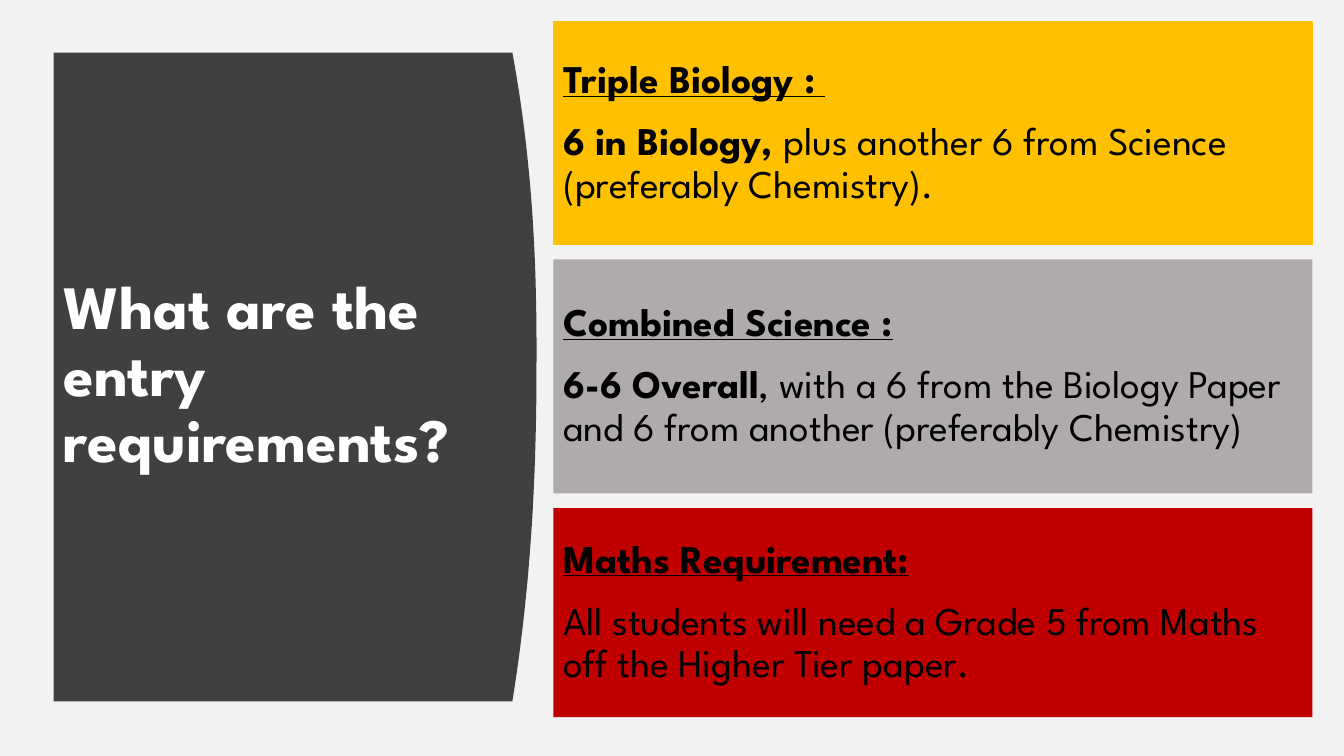
from dataclasses import dataclass

from pptx import Presentation
from pptx import util as u
from pptx.dml.color import RGBColor
from pptx.enum import shapes, text

PX = 9525


@dataclass(frozen=True)
class Theme:
    font: str = "League Spartan"
    background: str = "F2F2F2"
    banner: str = "404040"
    light_text: str = "FFFFFF"
    dark_text: str = "000000"
    biology: str = "FFC000"
    combined: str = "AFABAB"
    maths: str = "C00000"
    title_size: int = 44
    body_size: int = 28


@dataclass(frozen=True)
class Panel:
    heading: str
    emphasis: str
    detail: str
    color: str
    height: int
    outlined: bool = False


THEME = Theme()
PANEL_LEFT, PANEL_TOP, PANEL_WIDTH, PANEL_GAP = 527, 21, 723, 14
PANELS = [
    Panel("Triple Biology : ", "6 in Biology, ",
          "plus another 6 from Science (preferably Chemistry).",
          THEME.biology, 212, outlined=True),
    Panel("Combined Science :", "6-6 Overall",
          ", with a 6 from the Biology Paper and 6 from another (preferably Chemistry)",
          THEME.combined, 223),
    Panel("Maths Requirement:", "",
          "All students will need a Grade 5 from Maths off the Higher Tier paper.",
          THEME.maths, 199),
]


def rgb(color: str) -> RGBColor:
    return RGBColor.from_string(color)


def px(*lengths: float) -> list[int]:
    return [round(length * PX) for length in lengths]


def paint(shape, color: str, outlined: bool = False) -> None:
    shape.shadow.inherit = False
    shape.fill.solid()
    shape.fill.fore_color.rgb = rgb(color)
    if outlined:
        shape.line.color.rgb = rgb(color)
        shape.line.width = u.Pt(1)
    else:
        shape.line.fill.background()


def add_text(paragraph, words: str, *, size: int, color: str,
             bold: bool = False, underline: bool = False) -> None:
    run = paragraph.add_run()
    run.text = words
    run.font.name = THEME.font
    run.font.size = u.Pt(size)
    run.font.color.rgb = rgb(color)
    run.font.bold = bold
    run.font.underline = underline


def format_paragraph(paragraph, before: int = 0, after: int = 0) -> None:
    paragraph.alignment = text.PP_ALIGN.LEFT
    paragraph.line_spacing = 0.9
    paragraph.space_before = u.Pt(before)
    paragraph.space_after = u.Pt(after)


def prepare_frame(shape):
    frame = shape.text_frame
    frame.word_wrap = True
    frame.vertical_anchor = text.MSO_ANCHOR.MIDDLE
    return frame


def add_banner(slide) -> None:
    left, right, top, bottom = 51, 488, 50, 668
    middle, bulge, steps = 338, 23, 48
    curve = []
    for step in range(steps + 1):
        y = top + (bottom - top) * step / steps
        reach = middle - top if y < middle else bottom - middle
        x = right + bulge * (1 - (abs(y - middle) / reach) ** 2.3)
        curve.append(tuple(px(x, y)))
    builder = slide.shapes.build_freeform(*px(left, top))
    builder.add_line_segments([*curve, tuple(px(left, bottom))], close=True)
    paint(builder.convert_to_shape(), THEME.banner)


def add_title(slide) -> None:
    frame = prepare_frame(slide.shapes.add_textbox(*px(51, 107, 443, 503)))
    paragraph = frame.paragraphs[0]
    format_paragraph(paragraph)
    add_text(paragraph, "What are the entry requirements?",
             size=THEME.title_size, color=THEME.light_text, bold=True)


def add_panel(slide, panel: Panel, top: int) -> None:
    shape = slide.shapes.add_shape(
        shapes.MSO_SHAPE.RECTANGLE, *px(PANEL_LEFT, top, PANEL_WIDTH, panel.height))
    paint(shape, panel.color, panel.outlined)
    frame = prepare_frame(shape)
    heading, body = frame.paragraphs[0], frame.add_paragraph()
    for paragraph in (heading, body):
        format_paragraph(paragraph, before=12, after=2)
    style = dict(size=THEME.body_size, color=THEME.dark_text)
    add_text(heading, panel.heading, bold=True, underline=True, **style)
    if panel.emphasis:
        add_text(body, panel.emphasis, bold=True, **style)
    add_text(body, panel.detail, **style)


def main() -> None:
    presentation = Presentation()
    presentation.slide_width, presentation.slide_height = px(1280, 720)
    slide = presentation.slides.add_slide(presentation.slide_layouts[6])
    slide.background.fill.solid()
    slide.background.fill.fore_color.rgb = rgb(THEME.background)
    add_banner(slide)
    add_title(slide)
    top = PANEL_TOP
    for panel in PANELS:
        add_panel(slide, panel, top)
        top += panel.height + PANEL_GAP
    presentation.save("out.pptx")


if __name__ == "__main__":
    main()
